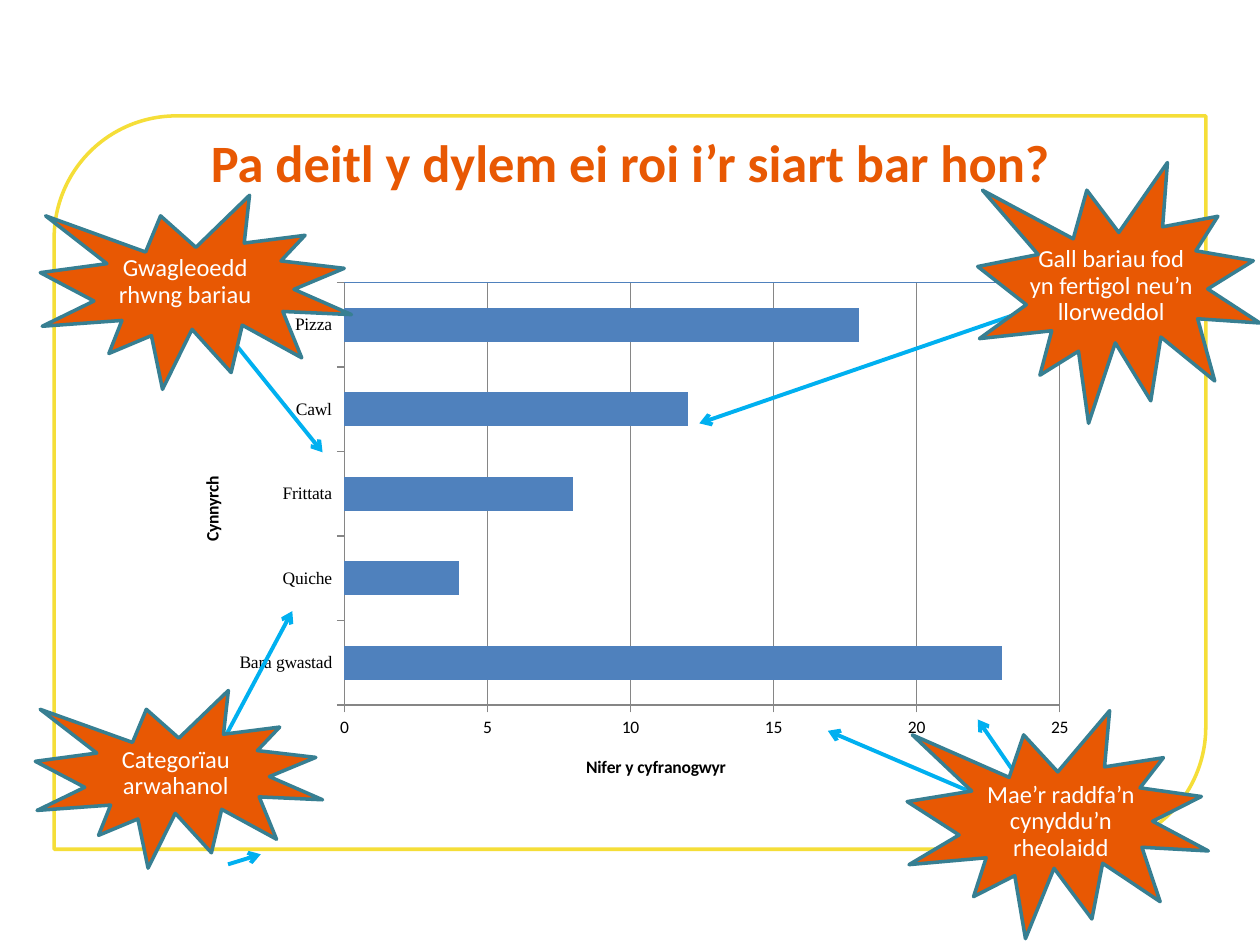
"""Build a slide of a bar chart with starburst callouts and arrows."""
from typing import NamedTuple

from lxml import etree
from pptx import Presentation
from pptx.chart.data import CategoryChartData
from pptx.dml.color import RGBColor
from pptx.enum.chart import XL_CHART_TYPE, XL_TICK_MARK
from pptx.enum.shapes import MSO_CONNECTOR, MSO_SHAPE
from pptx.enum.text import MSO_ANCHOR, MSO_AUTO_SIZE, PP_ALIGN
from pptx.oxml.ns import qn
from pptx.util import Pt

SCALE = 9144
FONT = "Calibri"
SERIF = "Times New Roman"
WHITE = RGBColor(0xFF, 0xFF, 0xFF)
BLACK = RGBColor(0, 0, 0)
ORANGE = RGBColor(0xE8, 0x58, 0x03)
YELLOW = RGBColor(0xF5, 0xDE, 0x38)
TEAL = RGBColor(0x37, 0x7F, 0x92)
SKY = RGBColor(0x00, 0xB0, 0xF0)
BLUE = RGBColor(0x4F, 0x81, 0xBD)
GREY = RGBColor(0x86, 0x86, 0x86)

BAR = XL_CHART_TYPE.BAR_CLUSTERED
OUT = XL_TICK_MARK.OUTSIDE
LINE = MSO_CONNECTOR.STRAIGHT
BURST = MSO_SHAPE.EXPLOSION1
FRAME = MSO_SHAPE.ROUND_2_DIAG_RECTANGLE
MIDDLE = MSO_ANCHOR.MIDDLE
GROW = MSO_AUTO_SIZE.SHAPE_TO_FIT_TEXT
CENTER = PP_ALIGN.CENTER


class Box(NamedTuple):
    left: int
    top: int
    width: int
    height: int


class Arrow(NamedTuple):
    x1: int
    y1: int
    x2: int
    y2: int


class Burst(NamedTuple):
    star: Box
    label: Box
    text: str


ARROWS = [
    Arrow(824, 690, 823, 684),
    Arrow(824, 686, 815, 680),
    Arrow(181, 686, 207, 678),
    Arrow(169, 603, 232, 485),
    Arrow(161, 241, 256, 359),
    Arrow(854, 233, 555, 336),
    Arrow(823, 651, 657, 580),
    Arrow(831, 651, 776, 571),
]
BURSTS = [
    Burst(Box(32, 155, 247, 154), Box(67, 198, 160, 53), "Gwagleoedd rhwng bariau"),
    Burst(Box(720, 564, 239, 181), Box(771, 616, 142, 74),
          "Mae’r raddfa’n cynyddu’n rheolaidd"),
    Burst(Box(28, 548, 228, 141), Box(59, 588, 161, 53), "Categorïau arwahanol"),
    Burst(Box(776, 129, 224, 207), Box(807, 191, 150, 74),
          "Gall bariau fod yn fertigol neu’n llorweddol"),
]
COUNTS = {"Bara gwastad": 23, "Quiche": 4, "Frittata": 8, "Cawl": 12, "Pizza": 18}


def emu(px: tuple) -> list[int]:
    """Turn px lengths into EMU."""
    return [n * SCALE for n in px]


def add_shape(slide, kind, box: Box, fill: RGBColor, edge: RGBColor) -> None:
    """Draw a filled and outlined preset shape."""
    shape = slide.shapes.add_shape(kind, *emu(box))
    shape.shadow.inherit = False
    shape.fill.solid()
    shape.fill.fore_color.rgb = fill
    shape.line.color.rgb = edge
    shape.line.width = Pt(2)


def add_text(slide, box: Box, text: str, size: int, color: RGBColor, bold: bool = False):
    """Draw a centred paragraph and return its frame."""
    frame = slide.shapes.add_textbox(*emu(box)).text_frame
    frame.word_wrap = True
    para = frame.paragraphs[0]
    para.text = text
    para.alignment = CENTER
    para.line_spacing = 0.9
    font = para.font
    font.name, font.size, font.bold = FONT, Pt(size), bold
    font.color.rgb = color
    return frame


def add_arrow(slide, arrow: Arrow) -> None:
    """Draw a line with an open head at its end."""
    link = slide.shapes.add_connector(LINE, *emu(arrow))
    link.line.color.rgb = SKY
    link.line.width = Pt(2.25)
    etree.SubElement(link.line._get_or_add_ln(), qn("a:tailEnd"), type="arrow")
    etree.SubElement(link._element.spPr, qn("a:effectLst"))


def add_burst(slide, burst: Burst) -> None:
    """Draw a starburst and its label."""
    add_shape(slide, BURST, burst.star, ORANGE, TEAL)
    add_text(slide, burst.label, burst.text, 14, WHITE).auto_size = GROW


def place(node, index: int, **spots: float) -> None:
    """Give a chart part a fixed layout."""
    for old in node.findall(qn("c:layout")):
        node.remove(old)
    layout = etree.Element(qn("c:layout"))
    node.insert(index, layout)
    manual = etree.SubElement(layout, qn("c:manualLayout"))
    if "w" in spots:
        etree.SubElement(manual, qn("c:layoutTarget"), val="inner")
    for key in "xy":
        etree.SubElement(manual, qn(f"c:{key}Mode"), val="edge")
    for key, spot in spots.items():
        etree.SubElement(manual, qn(f"c:{key}"), val=str(spot))


def style_axis(axis, title: str, x: float, y: float) -> None:
    """Set the title, ticks and line of an axis."""
    frame = axis.axis_title.text_frame
    frame.text = title
    font = frame.paragraphs[0].font
    font.name, font.size, font.bold = FONT, Pt(10), True
    font.color.rgb = BLACK
    place(axis.axis_title._element, 1, x=x, y=y)
    axis.major_tick_mark = OUT
    axis.format.line.color.rgb = GREY


def add_chart(slide, box: Box) -> None:
    """Draw the bar chart."""
    data = CategoryChartData()
    data.categories = list(COUNTS)
    data.add_series("Series 1", list(COUNTS.values()))
    chart = slide.shapes.add_chart(BAR, *emu(box), data).chart
    chart.has_legend = chart.has_title = False
    chart.font.name, chart.font.size = FONT, Pt(10)
    chart.font.color.rgb = BLACK

    plot = chart.plots[0]
    plot.gap_width = 150
    plot.vary_by_categories = False
    fill = plot.series[0].format.fill
    fill.solid()
    fill.fore_color.rgb = BLUE

    cats, vals = chart.category_axis, chart.value_axis
    style_axis(cats, "Cynnyrch", 0.03, 0.38)
    style_axis(vals, "Nifer y cyfranogwyr", 0.45, 0.91)
    cats.tick_labels.font.name = SERIF
    cats.tick_labels.font.size = Pt(10)
    vals.minimum_scale, vals.maximum_scale, vals.major_unit = 0, 25, 5
    vals.major_gridlines.format.line.color.rgb = GREY

    area = chart._chartSpace.chart.plotArea
    place(area, 0, x=0.19, y=0.02, w=0.78, h=0.8)
    props = etree.SubElement(area, qn("c:spPr"))
    edge = etree.SubElement(props, qn("a:ln"), w="9525")
    solid = etree.SubElement(edge, qn("a:solidFill"))
    etree.SubElement(solid, qn("a:srgbClr"), val=str(BLUE))


def main() -> None:
    """Build and save the slide."""
    deck = Presentation()
    deck.slide_width, deck.slide_height = emu((1000, 750))
    slide = deck.slides.add_slide(deck.slide_layouts[6])
    add_shape(slide, FRAME, Box(43, 92, 914, 582), WHITE, YELLOW)
    title = add_text(slide, Box(146, 92, 709, 79),
                     "Pa deitl y dylem ei roi i’r siart bar hon?", 30, ORANGE, True)
    title.vertical_anchor = MIDDLE
    add_chart(slide, Box(135, 216, 728, 419))
    for arrow in ARROWS:
        add_arrow(slide, arrow)
    for burst in BURSTS:
        add_burst(slide, burst)
    deck.save("out.pptx")


if __name__ == "__main__":
    main()
